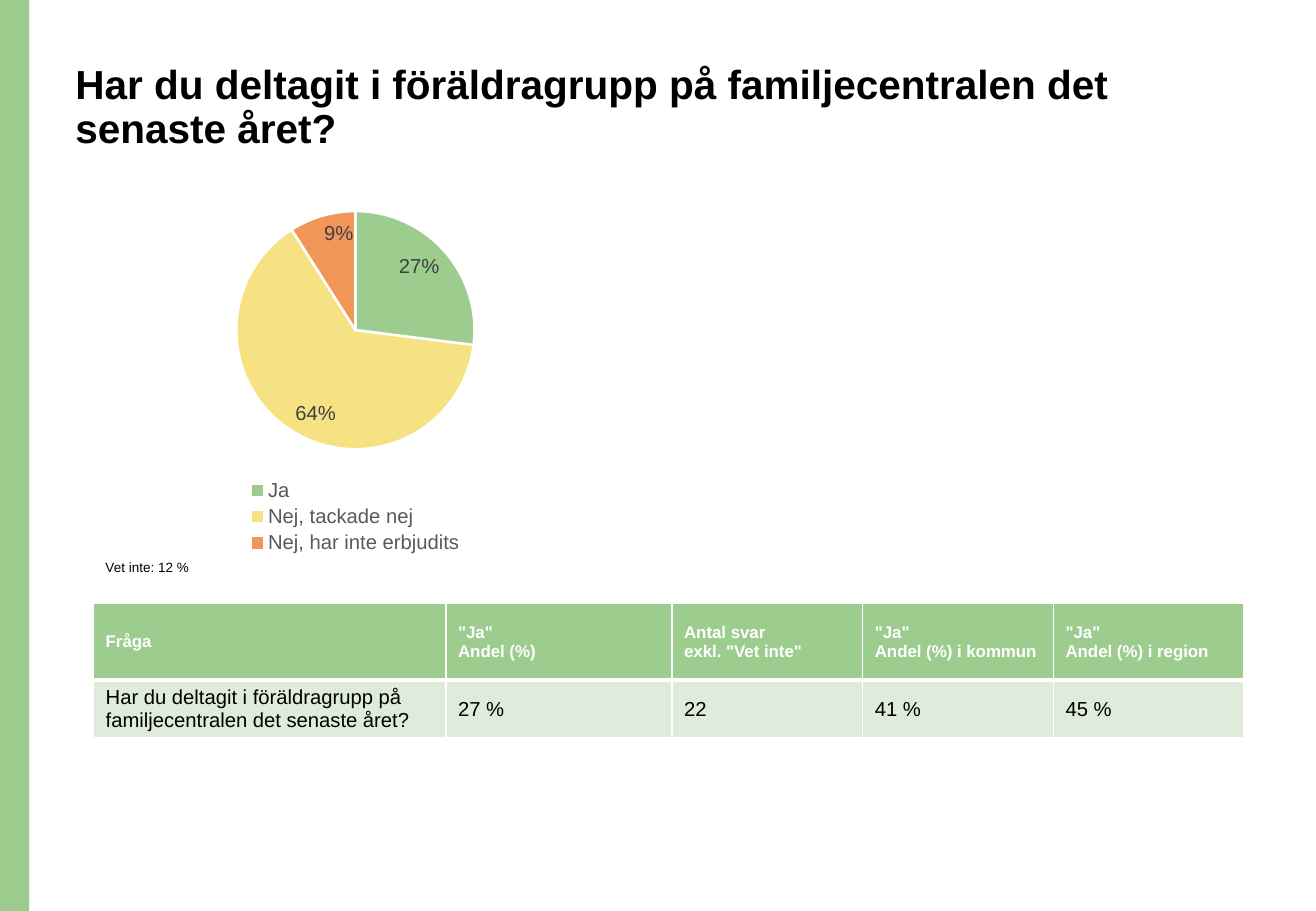
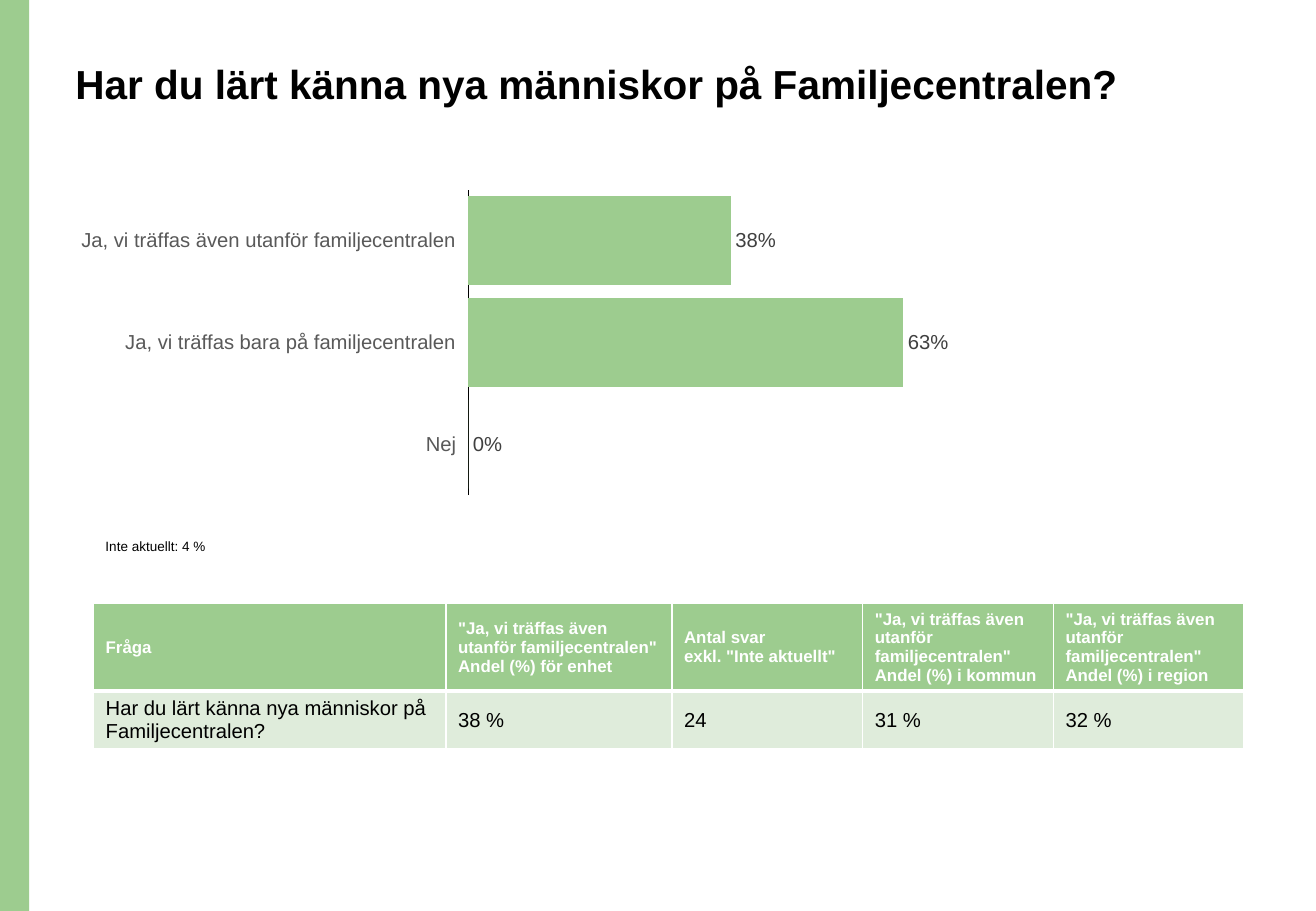
from dataclasses import dataclass

from lxml.etree import SubElement as Sub
from pptx import Presentation
from pptx.chart.data import CategoryChartData as Data
from pptx.dml.color import RGBColor
from pptx.enum.chart import XL_CHART_TYPE as Kind
from pptx.enum.chart import XL_LABEL_POSITION as Pos
from pptx.enum.chart import XL_LEGEND_POSITION as Side
from pptx.enum.chart import XL_TICK_LABEL_POSITION as Tick
from pptx.enum.chart import XL_TICK_MARK as Mark
from pptx.enum.shapes import MSO_SHAPE as Form
from pptx.enum.text import MSO_ANCHOR as Anchor
from pptx.enum.text import MSO_AUTO_SIZE as Auto
from pptx.enum.text import PP_ALIGN as Align
from pptx.oxml.ns import qn
from pptx.util import Inches, Pt

# Shared look
GREEN = RGBColor(0x9D, 0xCC, 0x8F)
PALE = RGBColor(0xDF, 0xEC, 0xDB)
YELLOW = RGBColor(0xF6, 0xE1, 0x83)
ORANGE = RGBColor(0xF2, 0x95, 0x59)
WHITE = RGBColor(0xFF, 0xFF, 0xFF)
BLACK = RGBColor(0, 0, 0)
GREY = RGBColor(0x59, 0x59, 0x59)
DARK = RGBColor(0x40, 0x40, 0x40)
FONT = "Arial"
WIDE, HIGH = 10.83, 7.5
LEFT = 0.77
COLS = (2.9, 1.86, 1.57, 1.57, 1.57)
ROWS = (0.63, 0.23)


@dataclass(frozen=True)
class Box:
    x: float
    y: float
    w: float
    h: float

    def emu(self) -> tuple:
        return tuple(Inches(v) for v in (self.x, self.y, self.w, self.h))


@dataclass(frozen=True)
class Plot:
    kind: Kind
    box: Box
    cats: tuple
    vals: tuple
    pos: Pos
    form: str


@dataclass(frozen=True)
class Page:
    title: str
    plot: Plot
    note: str
    spot: Box
    heads: tuple
    vals: tuple


TITLE = Box(0.52, 0.48, 9.34, 1.02)
MET = '"Ja, vi träffas även utanför familjecentralen"'

PAGES = (
    Page(
        "Har du deltagit i föräldragrupp på familjecentralen det senaste året?",
        Plot(Kind.PIE, Box(1.22, 1.6, 3.41, 3),
             ("Ja", "Nej, tackade nej", "Nej, har inte erbjudits"),
             (0.27, 0.64, 0.09), Pos.INSIDE_END, '[<0.01]"";[>0.01]0%'),
        "Vet inte: 12 %",
        Box(LEFT, 4.49, 2.1, 0.48),
        (("Fråga",), ('"Ja"', "Andel (%)"), ("Antal svar", 'exkl. "Vet inte"'),
         ('"Ja"', "Andel (%) i kommun"), ('"Ja"', "Andel (%) i region")),
        ("27 %", "22", "41 %", "45 %"),
    ),
    Page(
        "Har du lärt känna nya människor på Familjecentralen?",
        Plot(Kind.BAR_CLUSTERED, Box(0.52, 1.51, 7.46, 2.62),
             ("Ja, vi träffas även utanför familjecentralen",
              "Ja, vi träffas bara på familjecentralen", "Nej"),
             (0.38, 0.63, 0), Pos.OUTSIDE_END, "0%"),
        "Inte aktuellt: 4 %",
        Box(LEFT, 4.31, 2.1, 0.28),
        (("Fråga",), (MET, "Andel (%) för enhet"),
         ("Antal svar", 'exkl. "Inte aktuellt"'),
         (MET, "Andel (%) i kommun"), (MET, "Andel (%) i region")),
        ("38 %", "24", "31 %", "32 %"),
    ),
)


def style(font, size: float, color: RGBColor, bold: bool = False) -> None:
    font.name, font.size, font.bold = FONT, Pt(size), bold
    font.color.rgb = color


def write(frame, lines: tuple, size: float, color: RGBColor,
          bold: bool = False, gap: float = 1) -> None:
    for i, line in enumerate(lines):
        para = frame.add_paragraph() if i else frame.paragraphs[0]
        para.alignment = Align.LEFT
        para.line_spacing = gap
        run = para.add_run()
        run.text = line
        style(run.font, size, color, bold)


def add_band(slide) -> None:
    band = slide.shapes.add_shape(Form.RECTANGLE, *Box(0, 0, 0.24, HIGH).emu())
    band.shadow.inherit = False
    band.fill.solid()
    band.fill.fore_color.rgb = GREEN
    band.line.fill.background()


def add_title(slide, text: str) -> None:
    title = slide.shapes.title
    title.left, title.top, title.width, title.height = TITLE.emu()
    frame = title.text_frame
    frame.auto_size = Auto.NONE
    frame.vertical_anchor = Anchor.TOP
    write(frame, (text,), 24, BLACK, True, 0.9)


def add_note(slide, text: str, box: Box) -> None:
    frame = slide.shapes.add_textbox(*box.emu()).text_frame
    frame.word_wrap = True
    write(frame, (text,), 8, BLACK, gap=1.5)


def paint_pie(chart) -> None:
    for i, color in enumerate((GREEN, YELLOW, ORANGE)):
        form = chart.series[0].points[i].format
        form.fill.solid()
        form.fill.fore_color.rgb = color
        form.line.color.rgb = WHITE
        form.line.width = Pt(1.5)
    chart.has_legend = True
    chart.legend.position = Side.BOTTOM
    chart.legend.include_in_layout = False
    style(chart.legend.font, 12, GREY)


def paint_bars(chart) -> None:
    plot = chart.plots[0]
    plot.gap_width = 15
    plot.vary_by_categories = False
    fill = plot.series[0].format.fill
    fill.solid()
    fill.fore_color.rgb = GREEN
    chart.has_legend = False
    axis = chart.category_axis
    axis.reverse_order = True
    axis.major_tick_mark = axis.minor_tick_mark = Mark.NONE
    axis.tick_label_position = Tick.LOW
    axis.format.line.color.rgb = BLACK
    axis.format.line.width = Pt(0.75)
    style(axis.tick_labels.font, 12, GREY)
    scale = chart.value_axis
    scale.minimum_scale, scale.maximum_scale = 0, 0.7
    scale.has_major_gridlines = False
    scale.visible = False


def add_plot(slide, plot: Plot) -> None:
    data = Data()
    data.categories = plot.cats
    data.add_series("Series 1", plot.vals)
    chart = slide.shapes.add_chart(plot.kind, *plot.box.emu(), data).chart
    chart.has_title = False
    style(chart.font, 10, BLACK)
    paint = paint_pie if plot.kind == Kind.PIE else paint_bars
    paint(chart)
    chart.plots[0].has_data_labels = True
    tags = chart.plots[0].data_labels
    tags.show_value = True
    tags.show_percentage = False
    tags.number_format = plot.form
    tags.number_format_is_linked = False
    tags.position = plot.pos
    style(tags.font, 12, DARK)


def add_edges(cell, base: float) -> None:
    props = cell._tc.get_or_add_tcPr()
    for side, width in (("L", 1), ("R", 1), ("T", 1), ("B", base)):
        edge = Sub(props, qn(f"a:ln{side}"), w=str(Pt(width)))
        fill = Sub(edge, qn("a:solidFill"))
        Sub(fill, qn("a:srgbClr"), val=str(WHITE))


def add_grid(slide, page: Page) -> None:
    box = Box(LEFT, 4.97, sum(COLS), sum(ROWS))
    grid = slide.shapes.add_table(len(ROWS), len(COLS), *box.emu()).table
    for col, width in zip(grid.columns, COLS):
        col.width = Inches(width)
    body = tuple((text,) for text in (page.title, *page.vals))
    looks = ((page.heads, GREEN, 3, 10, WHITE, True),
             (body, PALE, 1, 12, BLACK, False))
    for row, high, look in zip(grid.rows, ROWS, looks):
        row.height = Inches(high)
        texts, fill, base, size, color, bold = look
        for cell, lines in zip(row.cells, texts):
            cell.vertical_anchor = Anchor.MIDDLE
            add_edges(cell, base)
            cell.fill.solid()
            cell.fill.fore_color.rgb = fill
            write(cell.text_frame, lines, size, color, bold)


def main() -> None:
    deck = Presentation()
    deck.slide_width, deck.slide_height = Inches(WIDE), Inches(HIGH)
    for page in PAGES:
        slide = deck.slides.add_slide(deck.slide_layouts[5])
        add_band(slide)
        add_title(slide, page.title)
        add_plot(slide, page.plot)
        add_grid(slide, page)
        add_note(slide, page.note, page.spot)
    deck.save("out.pptx")


if __name__ == "__main__":
    main()
